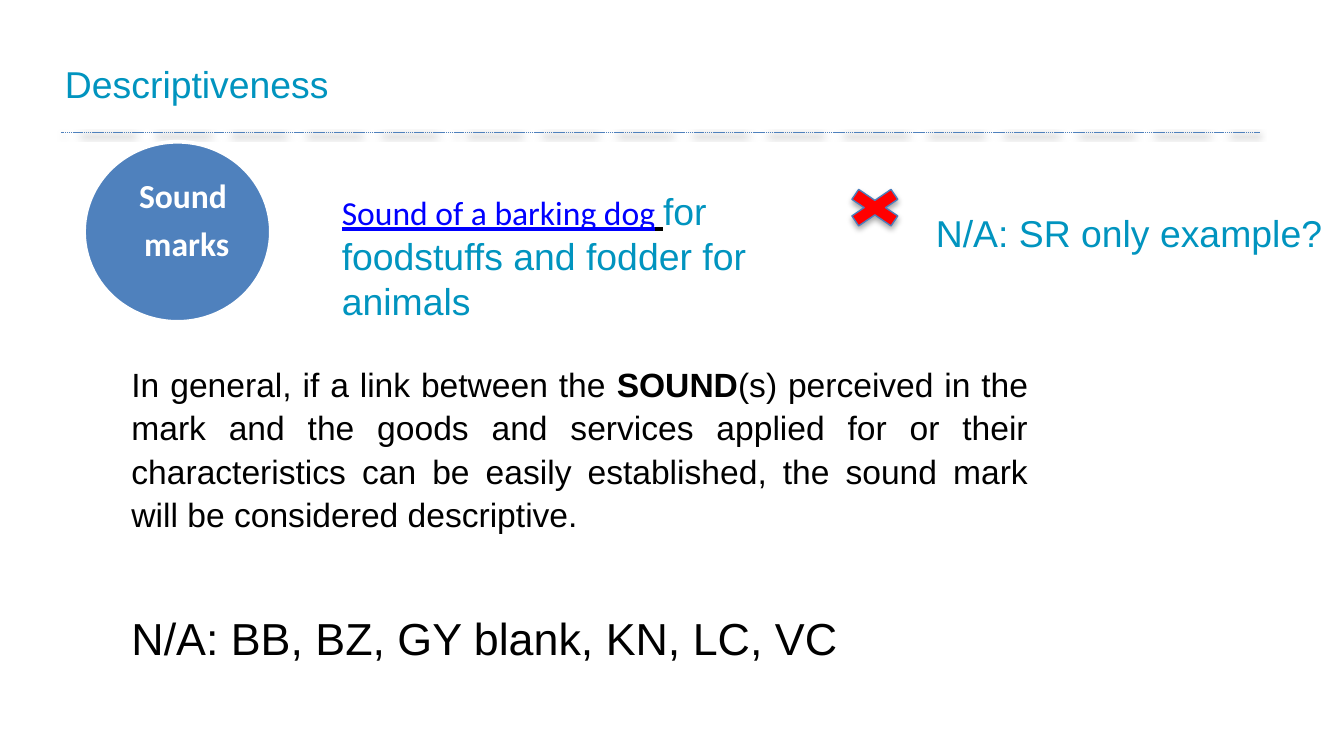
from pptx import Presentation
from pptx.dml.color import RGBColor
from pptx.enum.dml import MSO_LINE
from pptx.enum.shapes import MSO_CONNECTOR, MSO_SHAPE
from pptx.enum.text import MSO_ANCHOR, PP_ALIGN
from pptx.util import Pt

PX = 4572  # 200 px to the inch
TEAL = RGBColor(0x01, 0x94, 0xBF)
BLUE = RGBColor(0x4F, 0x81, 0xBD)
OUTLINE = RGBColor(0x4B, 0x7E, 0xBC)
LINK = RGBColor(0x00, 0x00, 0xFF)
RED = RGBColor(0xFF, 0x00, 0x00)
BLACK = RGBColor(0x00, 0x00, 0x00)
WHITE = RGBColor(0xFF, 0xFF, 0xFF)

deck = Presentation()
deck.slide_width, deck.slide_height = 2000 * PX, 1125 * PX
page = deck.slides.add_slide(deck.slide_layouts[6])


def add_box(left, top, width, height, anchor=MSO_ANCHOR.TOP, wrap=True):
    box = page.shapes.add_textbox(left * PX, top * PX, width * PX, height * PX)
    box.text_frame.word_wrap = wrap
    box.text_frame.vertical_anchor = anchor
    return box.text_frame


def style(font, size, color, name="Arial", bold=False):
    font.size, font.name, font.bold = Pt(size), name, bold
    font.color.rgb = color


# Rule under the title, with the theme's soft shadow
rule = page.shapes.add_connector(
    MSO_CONNECTOR.STRAIGHT, 91 * PX, 197 * PX, 1875 * PX, 197 * PX)
rule.line.color.rgb = BLUE
rule.line.width = Pt(0.25)
rule.line.dash_style = MSO_LINE.SQUARE_DOT

# Red cross, with the theme's soft shadow
cross = page.shapes.add_shape(
    MSO_SHAPE.MATH_MULTIPLY, 1246 * PX, 271 * PX, 112 * PX, 76 * PX)
cross.fill.solid()
cross.fill.fore_color.rgb = RED
cross.line.color.rgb = OUTLINE
cross.line.width = Pt(0.75)

# Circle and its label
circle = page.shapes.add_shape(
    MSO_SHAPE.OVAL, 125 * PX, 211 * PX, 278 * PX, 268 * PX)
circle.shadow.inherit = False
circle.fill.solid()
circle.fill.fore_color.rgb = BLUE
circle.line.color.rgb = WHITE
circle.line.width = Pt(2)

label = add_box(126, 230, 304, 200, MSO_ANCHOR.MIDDLE)
label.margin_left = label.margin_right = 2 * PX
label.margin_top = label.margin_bottom = 2 * PX
label.text = "Sound \nmarks"
for para in label.paragraphs:
    para.alignment = PP_ALIGN.CENTER
    para.line_spacing = 0.9
    para.space_after = Pt(6)
    style(para.font, 18, WHITE, "Calibri", True)

# Example mark and its goods
example = add_box(489, 270, 660, 222).paragraphs[0]
for text, size, color, name, underline in (
    ("Sound of a barking dog", 18, LINK, "Calibri", True),
    (" ", 18, BLACK, "Calibri", True),
    ("for foodstuffs and fodder for animals", 20, TEAL, "Arial", False),
):
    span = example.add_run()
    span.text = text
    style(span.font, size, color, name)
    span.font.underline = underline

# Title and side remark
title = add_box(77, 89, 1668, 70, MSO_ANCHOR.MIDDLE)
title.text = "Descriptiveness"
remark = add_box(1373, 303, 620, 88, wrap=False)
remark.text = "N/A: SR only example?"
for frame in (title, remark):
    style(frame.paragraphs[0].font, 20, TEAL)

# Explanation and country list
body = add_box(176, 528, 1374, 472)
general = body.paragraphs[0]
for text, bold in (
    ("In general, if a link between the ", False),
    ("SOUND", True),
    ("(s) perceived in the mark and the goods and services applied for or "
     "their characteristics can be easily established, the sound mark will "
     "be considered descriptive.", False),
):
    span = general.add_run()
    span.text = text
    style(span.font, 18, BLACK, bold=bold)

countries = body.add_paragraph()
countries.text = "N/A: BB, BZ, GY blank, KN, LC, VC"
countries.space_before = Pt(31)
style(countries.font, 24, BLACK)
for para in body.paragraphs:
    para.alignment = PP_ALIGN.JUSTIFY
    para.line_spacing = 1.07
    para.space_after = Pt(8)

deck.save("out.pptx")
